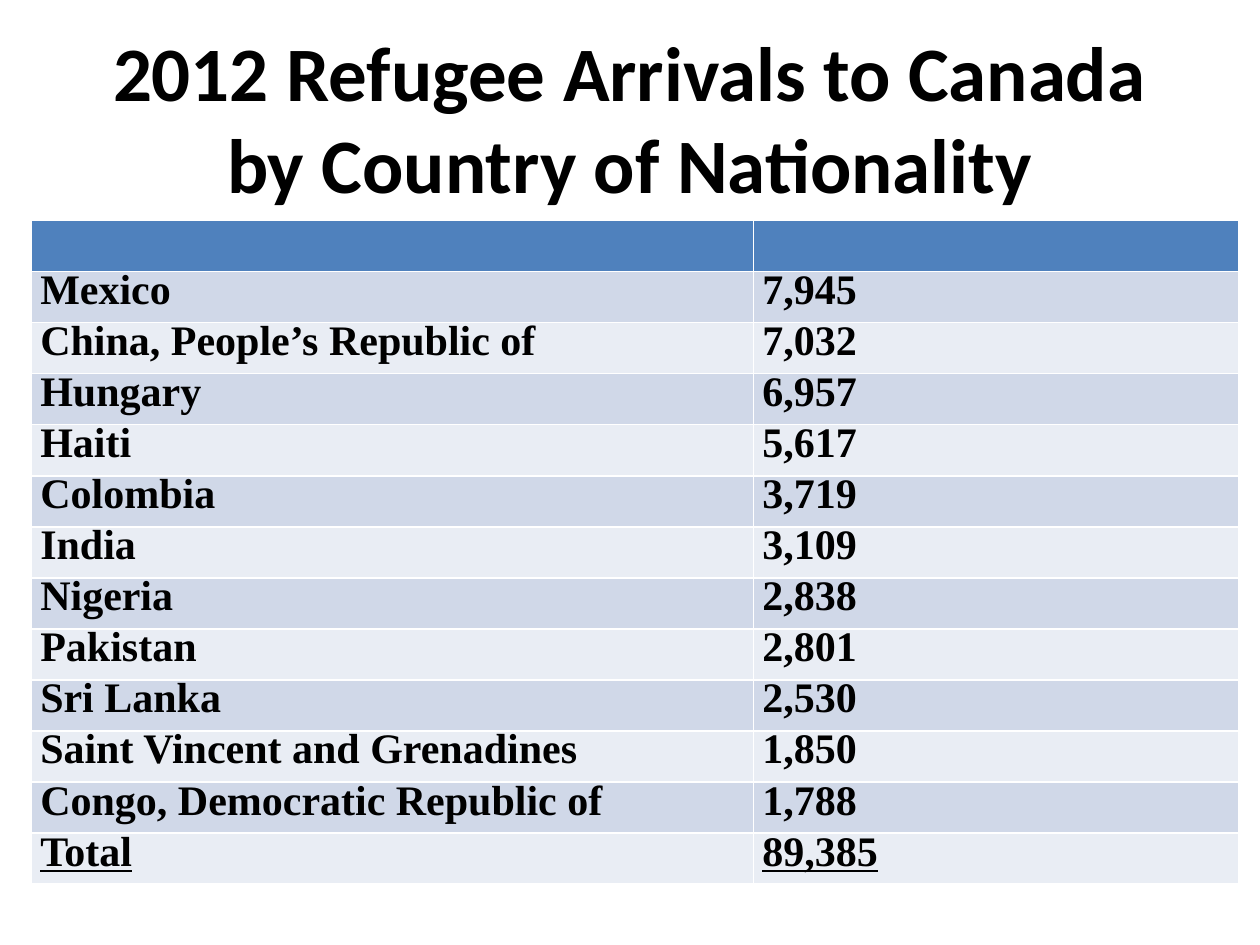
from pptx import Presentation
from pptx.dml.color import RGBColor as RGB
from pptx.enum.text import MSO_ANCHOR as Anchor, PP_ALIGN as Align
from pptx.util import Inches, Pt

ROWS = [
    ("Mexico", "7,945"),
    ("China, People’s Republic of", "7,032"),
    ("Hungary", "6,957"),
    ("Haiti", "5,617"),
    ("Colombia", "3,719"),
    ("India", "3,109"),
    ("Nigeria", "2,838"),
    ("Pakistan", "2,801"),
    ("Sri Lanka", "2,530"),
    ("Saint Vincent and Grenadines", "1,850"),
    ("Congo, Democratic Republic of", "1,788"),
    ("Total", "89,385"),
]


def paint(color, value):
    color.rgb = RGB.from_string(value)


class Page:
    """Holds the style and the current slide."""

    head, bands, ink = "4F81BD", ("E9EDF4", "D0D8E8"), "000000"

    def __init__(self, slide):
        self.slide = slide

    def style(self, para, face, size):
        font = para.font
        font.name, font.size, font.bold = face, Pt(size), True
        paint(font.color, self.ink)

    def title(self, text, left, top, width, height):
        shape = self.slide.shapes.title
        shape.left, shape.top = Inches(left), Inches(top)
        shape.width, shape.height = Inches(width), Inches(height)
        frame = shape.text_frame
        frame.text = text
        frame.word_wrap, frame.vertical_anchor = True, Anchor.MIDDLE
        para = frame.paragraphs[0]
        para.alignment = Align.CENTER
        self.style(para, "Calibri", 44)

    def fill(self, cell, color):
        cell.fill.solid()
        paint(cell.fill.fore_color, color)

    def cell(self, cell, text, last):
        cell.margin_left = cell.margin_right = Inches(0.07)
        cell.margin_top = cell.margin_bottom = 0
        cell.text = text
        para = cell.text_frame.paragraphs[0]
        para.line_spacing = Pt(24)
        self.style(para, "Times New Roman", 24)
        if last:
            para.font.underline = True

    def table(self, rows, left, top, widths, height):
        count = len(rows) + 1
        grid = self.slide.shapes.add_table(
            count, len(widths), Inches(left), Inches(top),
            Inches(sum(widths)), Inches(height)).table
        for col, width in zip(grid.columns, widths):
            col.width = Inches(width)
        for cell in grid.rows[0].cells:
            self.fill(cell, self.head)
        for r, row in enumerate(rows, 1):
            for c, text in enumerate(row):
                cell = grid.cell(r, c)
                self.fill(cell, self.bands[r % 2])
                self.cell(cell, text, r == len(rows))


def main():
    deck = Presentation()
    deck.slide_width, deck.slide_height = Inches(10), Inches(7.5)
    page = Page(deck.slides.add_slide(deck.slide_layouts[5]))
    page.title("2012 Refugee Arrivals to Canada by Country of Nationality",
               0.5, 0.3, 9, 1.25)
    page.table(ROWS, 0.25, 1.75, (5.73, 3.85), 5.27)
    deck.save("out.pptx")


if __name__ == "__main__":
    main()
